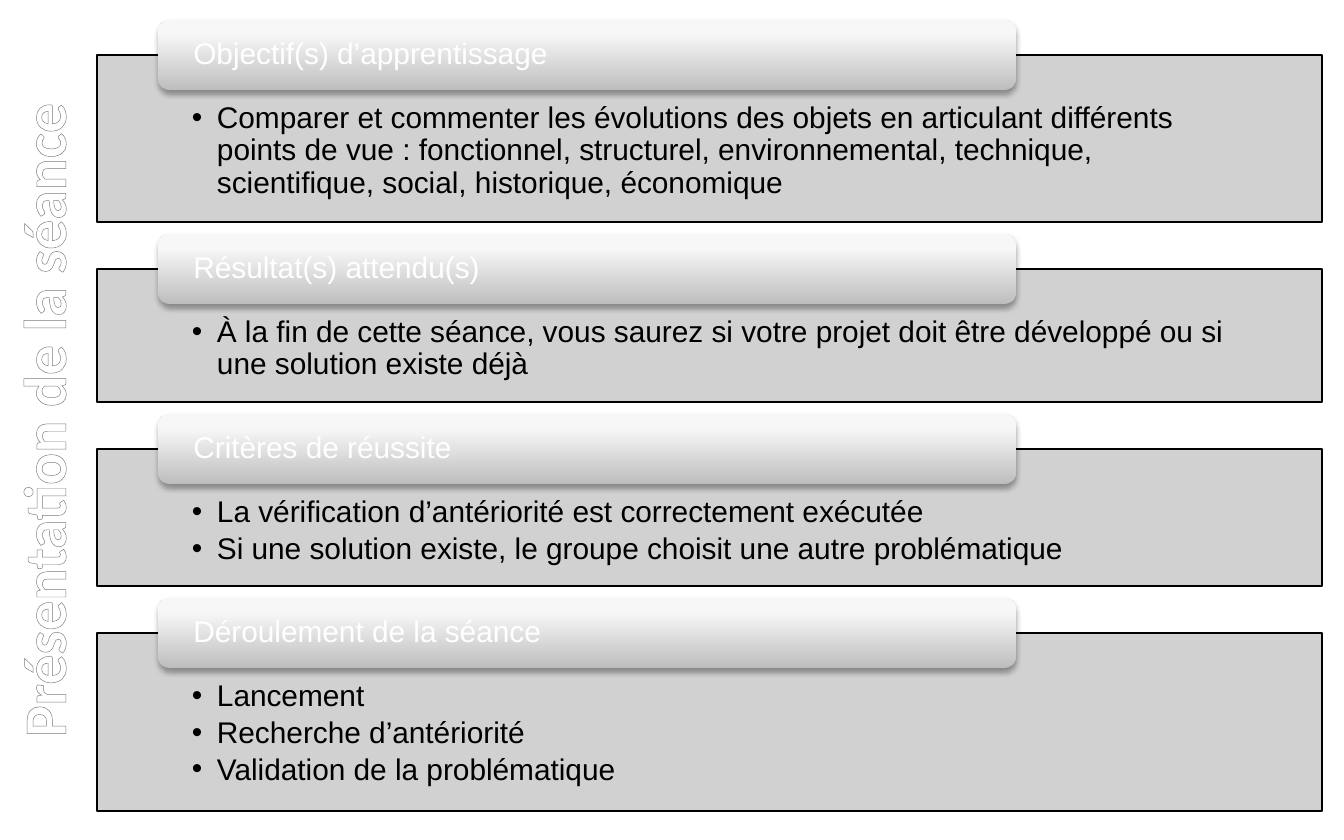
import copy
import dataclasses

import lxml.etree
import pptx
import pptx.dml.color
import pptx.enum.shapes
import pptx.enum.text
import pptx.oxml.ns
import pptx.util

PAGE_WIDTH, PAGE_HEIGHT = 1344, 840
EMU_PER_PX = pptx.util.Inches(10) / PAGE_WIDTH

PANEL_LEFT, PANEL_WIDTH, FIRST_PANEL_TOP, PANEL_GAP = 97, 1225, 55, 47
TAB_LEFT, TAB_WIDTH, TAB_HEIGHT = 158, 858, 70
TITLE_HEIGHT = 84
BULLET_INDENT = 25
TAB_GRADIENT = [(0, "BEBEBE"), (0.8, "F7F7F7"), (1, "F8F8F8")]

SHAPES = pptx.enum.shapes.MSO_SHAPE
ANCHOR = pptx.enum.text.MSO_ANCHOR
ALIGN = pptx.enum.text.PP_ALIGN


@dataclasses.dataclass
class Section:
    heading: str
    items: list[str]
    height: int


SECTIONS = [
    Section("Objectif(s) d’apprentissage", [
        "Comparer et commenter les évolutions des objets en articulant différents "
        "points de vue : fonctionnel, structurel, environnemental, technique, "
        "scientifique, social, historique, économique"], 167),
    Section("Résultat(s) attendu(s)", [
        "À la fin de cette séance, vous saurez si votre projet doit être développé "
        "ou si une solution existe déjà"], 133),
    Section("Critères de réussite", [
        "La vérification d’antériorité est correctement exécutée",
        "Si une solution existe, le groupe choisit une autre problématique"], 137),
    Section("Déroulement de la séance", [
        "Lancement", "Recherche d’antériorité", "Validation de la problématique"], 178),
]


def px(length: int) -> pptx.util.Emu:
    return pptx.util.Emu(round(length * EMU_PER_PX))


def rgb(color: str) -> pptx.dml.color.RGBColor:
    return pptx.dml.color.RGBColor.from_string(color)


def add_node(parent, tag: str, **attributes):
    node = lxml.etree.SubElement(parent, pptx.oxml.ns.qn(tag))
    for name, value in attributes.items():
        node.set(name, str(value))
    return node


def write(para, text: str, *, color: str, size: int = 16, font: str = "Arial",
          bold: bool = False, bullet: bool = False, after_percent: int = 0):
    """Fill a paragraph and return its run."""
    properties = para._p.get_or_add_pPr()
    if bullet:
        properties.set("marL", str(px(BULLET_INDENT)))
        properties.set("indent", str(-px(BULLET_INDENT)))
        add_node(properties, "a:buFont", typeface="Arial")
        add_node(properties, "a:buChar", char="•")
    if after_percent:
        para.line_spacing = 0.9
        para.space_after = pptx.util.Pt(0)
        after = properties.find(pptx.oxml.ns.qn("a:spcAft"))
        after.remove(after[0])
        add_node(after, "a:spcPct", val=after_percent * 1000)
    span = para.add_run()
    span.text = text
    span.font.name = font
    span.font.size = pptx.util.Pt(size)
    span.font.bold = bold
    span.font.color.rgb = rgb(color)
    return span


def set_frame(frame, margins: tuple[int, int, int, int], anchor) -> None:
    """Set wrapping, anchor and the left, top, right and bottom margins."""
    frame.word_wrap = True
    frame.vertical_anchor = anchor
    (frame.margin_left, frame.margin_top,
     frame.margin_right, frame.margin_bottom) = map(px, margins)


def add_panel(page, top: int, section: Section) -> None:
    panel = page.shapes.add_shape(SHAPES.RECTANGLE, px(PANEL_LEFT), px(top),
                                  px(PANEL_WIDTH), px(section.height))
    panel.shadow.inherit = False
    panel.fill.solid()
    panel.fill.fore_color.rgb = rgb("CCCCCC")
    fill_color = panel._element.spPr.find(".//" + pptx.oxml.ns.qn("a:srgbClr"))
    add_node(fill_color, "a:alpha", val=90000)
    panel.line.color.rgb = rgb("000000")
    panel.line.width = pptx.util.Pt(0.75)
    frame = panel.text_frame
    set_frame(frame, (95, 48, 95, 16), ANCHOR.TOP)
    for index, item in enumerate(section.items):
        para = frame.add_paragraph() if index else frame.paragraphs[0]
        para.alignment = ALIGN.LEFT
        write(para, item, color="000000", bullet=True, after_percent=15)


def add_tab(page, top: int, heading: str) -> None:
    tab = page.shapes.add_shape(SHAPES.ROUNDED_RECTANGLE, px(TAB_LEFT), px(top),
                                px(TAB_WIDTH), px(TAB_HEIGHT))
    tab.line.fill.background()
    tab.fill.gradient()
    tab.fill.gradient_angle = 90
    stop_list = tab._element.spPr.find(".//" + pptx.oxml.ns.qn("a:gsLst"))
    stop_list.append(copy.deepcopy(stop_list[-1]))
    for stop, (position, color) in zip(tab.fill.gradient_stops, TAB_GRADIENT):
        stop.position = position
        stop.color.rgb = rgb(color)

    tab.shadow.inherit = False
    effects = tab._element.spPr.find(pptx.oxml.ns.qn("a:effectLst"))
    shadow = add_node(effects, "a:outerShdw", blurRad=pptx.util.Pt(3.1),
                      dist=pptx.util.Pt(1.8), dir=90 * 60000, rotWithShape=0)
    add_node(add_node(shadow, "a:srgbClr", val="000000"), "a:alpha", val=35000)

    set_frame(tab.text_frame, (32, 0, 32, 0), ANCHOR.MIDDLE)
    para = tab.text_frame.paragraphs[0]
    para.alignment = ALIGN.LEFT
    write(para, heading, color="FFFFFF", after_percent=35)


def add_side_title(page, text: str) -> None:
    """Add the outlined title that runs up the left edge."""
    box = page.shapes.add_textbox(px((TITLE_HEIGHT - PAGE_HEIGHT) // 2),
                                  px((PAGE_HEIGHT - TITLE_HEIGHT) // 2),
                                  px(PAGE_HEIGHT), px(TITLE_HEIGHT))
    box.rotation = 270
    set_frame(box.text_frame, (13, 7, 13, 7), ANCHOR.MIDDLE)
    para = box.text_frame.paragraphs[0]
    para.alignment = ALIGN.CENTER
    span = write(para, text, color="FFFFFF", size=32, font="Calibri", bold=True)
    properties = span._r.get_or_add_rPr()
    outline = add_node(properties, "a:ln", w=pptx.util.Pt(0.75))
    add_node(add_node(outline, "a:solidFill"), "a:srgbClr", val="7C7C7C")
    properties.insert(0, outline)


def main() -> None:
    deck = pptx.Presentation()
    deck.slide_width, deck.slide_height = px(PAGE_WIDTH), px(PAGE_HEIGHT)
    page = deck.slides.add_slide(deck.slide_layouts[6])
    add_side_title(page, "Présentation de la séance")
    top = FIRST_PANEL_TOP
    for section in SECTIONS:
        add_panel(page, top, section)
        add_tab(page, top - TAB_HEIGHT // 2, section.heading)
        top += section.height + PANEL_GAP
    deck.save("out.pptx")


if __name__ == "__main__":
    main()
